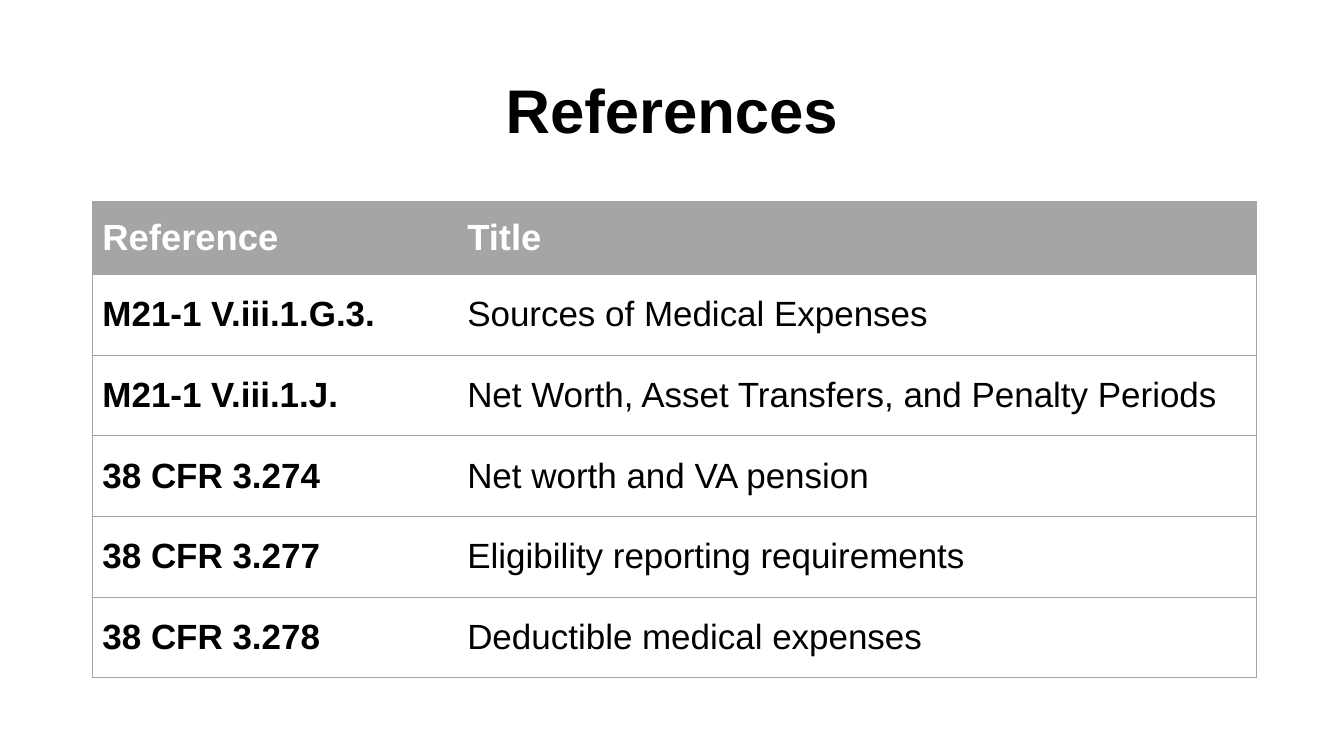
from lxml.etree import SubElement
from pptx import Presentation
from pptx.dml.color import RGBColor
from pptx.enum.text import MSO_ANCHOR, PP_ALIGN
from pptx.oxml.ns import qn
from pptx.util import Pt

COLORS = {"text": "000000", "header_text": "FFFFFF", "rule": "A5A5A5", "page": "FFFFFF"}
FONT = "Arial"
TITLE_BOX = (66, 28.8, 828, 104.4)
TABLE_BOX = (66, 144, 831.6, 340)
REFERENCE_WIDTH = 260.6
HEADER_HEIGHT = 52
HEADINGS = ("Reference", "Title")
REFERENCES = [
    ("M21-1 V.iii.1.G.3.", "Sources of Medical Expenses"),
    ("M21-1 V.iii.1.J.", "Net Worth, Asset Transfers, and Penalty Periods"),
    ("38 CFR 3.274", "Net worth and VA pension"),
    ("38 CFR 3.277", "Eligibility reporting requirements"),
    ("38 CFR 3.278", "Deductible medical expenses"),
]


def add_text(paragraph, text, size, color, bold):
    run = paragraph.add_run()
    run.text = text
    run.font.name = FONT
    run.font.size = Pt(size)
    run.font.bold = bold
    run.font.color.rgb = RGBColor.from_string(COLORS[color])


def set_borders(cell, visible_sides):
    properties = cell._tc.get_or_add_tcPr()
    for side in "LRTB":
        border = SubElement(properties, qn(f"a:ln{side}"), w=str(Pt(0.5)))
        if side in visible_sides:
            fill = SubElement(border, qn("a:solidFill"))
            SubElement(fill, qn("a:srgbClr"), val=COLORS["rule"])
        else:
            SubElement(border, qn("a:noFill"))


def add_title(slide, box):
    title = slide.shapes.title
    title.left, title.top, title.width, title.height = map(Pt, box)
    title.text_frame.vertical_anchor = MSO_ANCHOR.MIDDLE
    heading = title.text_frame.paragraphs[0]
    heading.alignment = PP_ALIGN.CENTER
    heading.line_spacing = 0.9
    add_text(heading, "References", 44, "text", True)


def add_references(slide, box):
    rows = [HEADINGS, *REFERENCES]
    table = slide.shapes.add_table(len(rows), len(HEADINGS), *map(Pt, box)).table
    table.horz_banding = False
    width, height = box[2:]
    table.columns[0].width = Pt(REFERENCE_WIDTH)
    table.columns[1].width = Pt(width - REFERENCE_WIDTH)
    entry_height = (height - HEADER_HEIGHT) / len(REFERENCES)
    for row_index, entry in enumerate(rows):
        is_header = row_index == 0
        table.rows[row_index].height = Pt(HEADER_HEIGHT if is_header else entry_height)
        for column_index, text in enumerate(entry):
            is_reference = column_index == 0
            cell = table.cell(row_index, column_index)
            cell.vertical_anchor = MSO_ANCHOR.MIDDLE
            set_borders(cell, "LTB" if is_reference else "RTB")
            cell.fill.solid()
            cell.fill.fore_color.rgb = RGBColor.from_string(COLORS["rule" if is_header else "page"])
            add_text(
                cell.text_frame.paragraphs[0],
                text,
                26 if is_header else 25,
                "header_text" if is_header else "text",
                is_header or is_reference,
            )


def main():
    deck = Presentation()
    deck.slide_width, deck.slide_height = Pt(960), Pt(540)
    slide = deck.slides.add_slide(deck.slide_layouts.get_by_name("Title Only"))
    add_title(slide, TITLE_BOX)
    add_references(slide, TABLE_BOX)
    deck.save("out.pptx")


if __name__ == "__main__":
    main()
